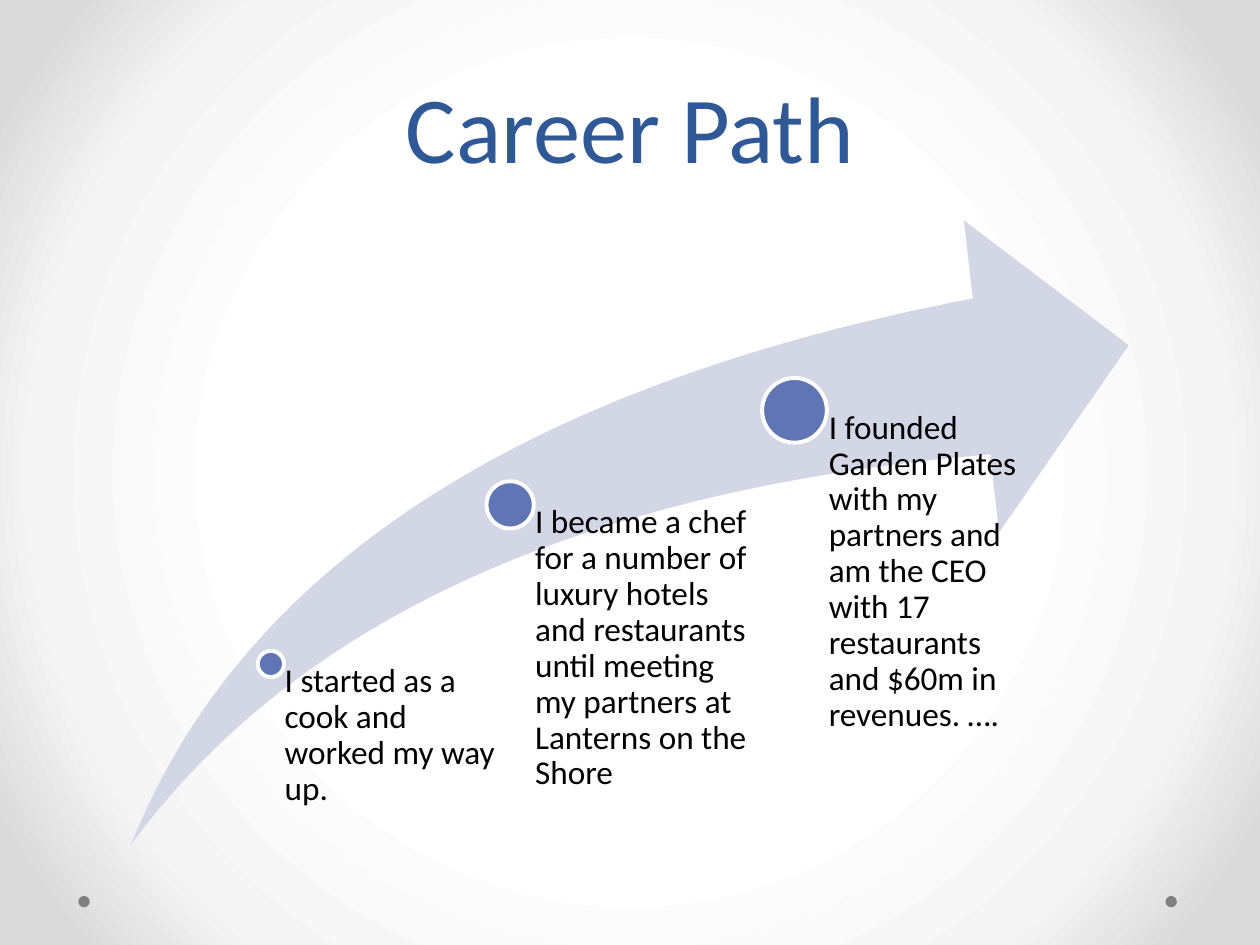
from pptx import Presentation
from pptx.dml.color import RGBColor
from pptx.enum.shapes import MSO_SHAPE
from pptx.enum.text import MSO_ANCHOR, PP_ALIGN
from pptx.oxml import parse_xml
from pptx.oxml.ns import nsdecls, qn
from pptx.util import Pt

OVAL = MSO_SHAPE.OVAL
SWOOSH = MSO_SHAPE.SWOOSH_ARROW
BOTTOM = MSO_ANCHOR.BOTTOM
TOP = MSO_ANCHOR.TOP
LEFT = PP_ALIGN.LEFT
CENTER = PP_ALIGN.CENTER

NAVY = RGBColor(0x2F, 0x58, 0x97)
BLUE = RGBColor(0x60, 0x76, 0xB4)
PALE = RGBColor(0xD2, 0xD6, 0xE5)
GREY = RGBColor(0x80, 0x80, 0x80)
WHITE = RGBColor(0xFF, 0xFF, 0xFF)
BLACK = RGBColor(0, 0, 0)
SHADES = [(50, WHITE), (76, RGBColor(0xF4, 0xF4, 0xF4)), (92, RGBColor(0xDA, 0xDA, 0xDA))]

deck = Presentation()
deck.slide_width, deck.slide_height = Pt(720), Pt(540)
slide = deck.slides.add_slide(deck.slide_layouts[6])

slide.background.fill.solid()
back = slide._element.find(".//" + qn("p:bgPr"))
stops = "".join(
    f'<a:gs pos="{pos * 1000}"><a:srgbClr val="{shade}"/></a:gs>' for pos, shade in SHADES
)
back.replace(back[0], parse_xml(
    f'<a:gradFill {nsdecls("a")} rotWithShape="1"><a:gsLst>{stops}</a:gsLst>'
    '<a:path path="circle"><a:fillToRect l="50000" t="50000" r="50000" b="50000"/></a:path>'
    '</a:gradFill>'
))


def add_shape(kind, left, top, width, height, color):
    shape = slide.shapes.add_shape(kind, Pt(left), Pt(top), Pt(width), Pt(height))
    shape.shadow.inherit = False
    shape.fill.solid()
    shape.fill.fore_color.rgb = color
    shape.line.fill.background()
    return shape


def add_text(words, left, top, width, height, size, color, align, anchor, space):
    box = slide.shapes.add_textbox(Pt(left), Pt(top), Pt(width), Pt(height))
    frame = box.text_frame
    frame.word_wrap = True
    frame.vertical_anchor = anchor
    frame.text = words
    para = frame.paragraphs[0]
    para.alignment = align
    para.line_spacing = space
    font = para.runs[0].font
    font.name, font.size, font.color.rgb = "Calibri", Pt(size), color
    return frame


for left in (666, 44.8):
    add_shape(OVAL, left, 512, 6.5, 6.5, GREY)

add_text("Career Path", 36, 12, 648, 96, 54, NAVY, CENTER, BOTTOM, Pt(58))

arrow = add_shape(SWOOSH, 75, 126, 570, 356.4, PALE)
arrow.adjustments[0] = 0.25
arrow.adjustments[1] = 0.25

STEPS = [
    (154.8, 379.4, 15, 133, "I started as a cook and worked my way up."),
    (291.5, 288.5, 27, 137, "I became a chef for a number of luxury hotels and restaurants "
     "until meeting my partners at Lanterns on the Shore"),
    (454, 234.5, 37, 137, "I founded Garden Plates with my partners and am the CEO "
     "with 17 restaurants and $60m in revenues. …."),
]
base = 482.4
for x, y, size, width, words in STEPS:
    dot = add_shape(OVAL, x - size / 2, y - size / 2, size, size, BLUE)
    dot.line.color.rgb = WHITE
    dot.line.width = Pt(2.25)
    frame = add_text(words, x, y, width, base - y, 19, BLACK, LEFT, TOP, 0.9)
    frame.margin_left = Pt(size * 0.53)
    frame.margin_top = frame.margin_right = frame.margin_bottom = 0

deck.save("out.pptx")
